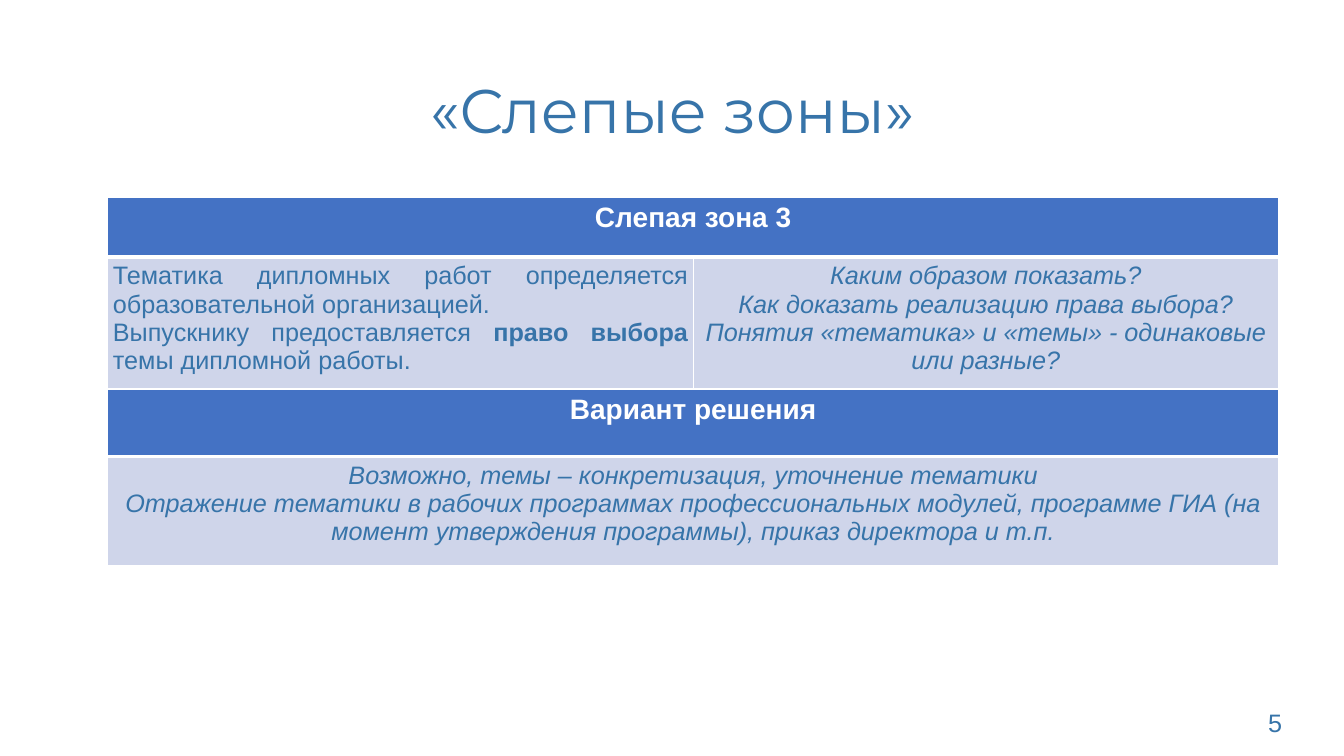
from pptx import Presentation
from pptx.dml.color import RGBColor as RGB
from pptx.enum.text import MSO_ANCHOR as Anchor, PP_ALIGN as Align
from pptx.oxml import parse_xml
from pptx.oxml.ns import nsdecls
from pptx.util import Inches, Pt

WHITE = RGB(0xFF, 0xFF, 0xFF)
BLUE = RGB(0x37, 0x74, 0xA9)
HEAD = RGB(0x44, 0x72, 0xC4)
PALE = RGB(0xCF, 0xD5, 0xEA)

TITLE = dict(size=Pt(44), name="Montserrat", bold=False)
TOP = dict(size=Pt(20), bold=True)
BODY = dict(size=Pt(18), bold=False)
ASK = dict(BODY, italic=True)


class Deck:
    """Holds the base style and the current slide."""

    def __init__(self, prs):
        self.base = dict(name="Arial")
        self.slide = prs.slides.add_slide(prs.slide_layouts[5])

    def place(self, shape, box):
        for key, val in zip(("left", "top", "width", "height"), box):
            setattr(shape, key, Inches(val))

    def text(self, frame, paras, style, color=BLUE, align=Align.CENTER):
        """Fill a frame; each paragraph is a list of (text, changes) runs."""
        frame.word_wrap = True
        for i, runs in enumerate(paras):
            para = frame.add_paragraph() if i else frame.paragraphs[0]
            para.alignment = align
            for words, change in runs:
                run = para.add_run()
                run.text = words
                for key, val in {**self.base, **style, **change}.items():
                    setattr(run.font, key, val)
                run.font.color.rgb = color

    def title(self, words, box):
        shape = self.slide.shapes.title
        self.place(shape, box)
        self.text(shape.text_frame, plain(words), TITLE)
        shape.text_frame.vertical_anchor = Anchor.MIDDLE
        shape.text_frame.paragraphs[0].line_spacing = 0.9

    def label(self, words, box):
        shape = self.slide.shapes.add_textbox(*map(Inches, box))
        self.text(shape.text_frame, plain(words), BODY, align=Align.LEFT)

    def edge(self, cell, **widths):
        """Draw white cell borders, with widths in points by side."""
        props = cell._tc.get_or_add_tcPr()
        for side in "LRTB":
            props.append(parse_xml(
                f'<a:ln{side} {nsdecls("a")} w="{Pt(widths.get(side, 1))}">'
                f'<a:solidFill><a:srgbClr val="{WHITE}"/></a:solidFill>'
                f'</a:ln{side}>'))

    def table(self, box, rows, head, cells, pad):
        """Add a heading row across the whole table and a row of cells."""
        grid = self.slide.shapes.add_table(
            2, len(cells), *map(Inches, box)).table
        for row, size in zip(grid.rows, rows):
            row.height = Inches(size)
        for i, (paras, style, align) in enumerate(cells):
            top, body = grid.cell(0, i), grid.cell(1, i)
            self.edge(top, B=3)
            self.edge(body, T=3)
            for cell, fill in ((top, HEAD), (body, PALE)):
                cell.fill.solid()
                cell.fill.fore_color.rgb = fill
                cell.margin_left = cell.margin_right = Inches(pad)
            self.text(body.text_frame, paras, style, align=align)
        first = grid.cell(0, 0)
        if len(cells) > 1:
            first.merge(grid.cell(0, len(cells) - 1))
        self.text(first.text_frame, plain(head), TOP, WHITE)


def plain(*lines):
    return [[(line, {})] for line in lines]


def main():
    prs = Presentation()
    prs.slide_width, prs.slide_height = Inches(13.33), Inches(7.5)
    deck = Deck(prs)
    deck.title("«Слепые зоны»", (0.92, 0.4, 11.5, 1.45))
    deck.label("5", (12.48, 6.97, 0.69, 0.4))

    topic = plain("Тематика дипломных работ определяется "
                  "образовательной организацией.")
    topic.append([("Выпускнику предоставляется ", {}),
                  ("право выбора", dict(bold=True)),
                  (" темы дипломной работы.", {})])
    doubts = plain("Каким образом показать?",
                   "Как доказать реализацию права выбора?",
                   "Понятия «тематика» и «темы» - одинаковые или разные?")
    answer = plain("Возможно, темы – конкретизация, уточнение тематики",
                   "Отражение тематики в рабочих программах профессиональных "
                   "модулей, программе ГИА (на момент утверждения программы), "
                   "приказ директора и т.п.")

    deck.table((1.07, 1.96, 11.61, 2.05), (0.59, 1.46), "Слепая зона 3",
               [(topic, BODY, Align.JUSTIFY), (doubts, ASK, Align.CENTER)],
               0.05)
    deck.table((1.07, 3.86, 11.61, 1.75), (0.67, 1.08), "Вариант решения",
               [(answer, ASK, Align.CENTER)], 0.1)
    prs.save("out.pptx")


if __name__ == "__main__":
    main()
